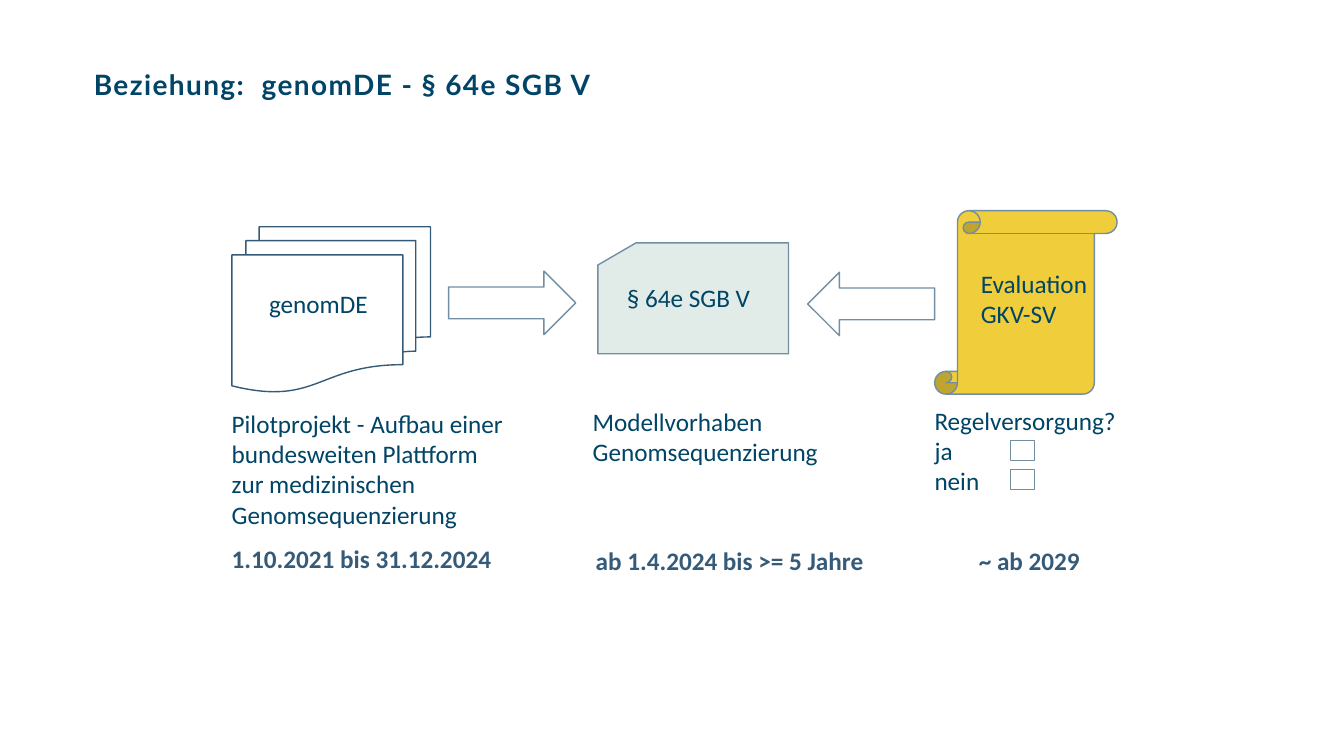
from dataclasses import dataclass
from typing import Optional

from pptx import Presentation
from pptx.dml.color import RGBColor
from pptx.enum.shapes import MSO_SHAPE
from pptx.enum.text import MSO_ANCHOR, PP_ALIGN
from pptx.util import Inches, Pt

NAVY, SLATE, OUTLINE = "004466", "355B79", "728EA3"
LABEL = {"name": "Calibri", "size": Pt(18), "bold": False}
DATE = {**LABEL, "bold": True}
HEADING = {"name": "Lato", "size": Pt(20), "bold": True}


@dataclass
class Figure:
    kind: MSO_SHAPE
    left: float
    top: float
    width: float
    height: float
    fill: Optional[str] = None
    line: str = OUTLINE
    rotation: float = 0


@dataclass
class Caption:
    lines: list[str]
    left: float
    top: float
    width: float
    height: float
    wrap: bool = False
    font: Optional[dict] = None
    color: str = NAVY


FIGURES = [
    Figure(MSO_SHAPE.FLOWCHART_CARD, 5.93, 2.41, 1.89, 1.1, "E1EBE7"),
    Figure(MSO_SHAPE.FLOWCHART_MULTIDOCUMENT, 2.3, 2.25, 1.97, 1.64, "FFFFFF", SLATE),
    Figure(MSO_SHAPE.RIGHT_ARROW, 4.45, 2.69, 1.26, 0.63),
    Figure(MSO_SHAPE.VERTICAL_SCROLL, 9.27, 2.09, 1.81, 1.82, "EFCD3B"),
    Figure(MSO_SHAPE.RIGHT_ARROW, 8.01, 2.7, 1.26, 0.63, rotation=180),
    Figure(MSO_SHAPE.RECTANGLE, 10.02, 4.37, 0.24, 0.2),
    Figure(MSO_SHAPE.RECTANGLE, 10.02, 4.66, 0.24, 0.2, "FFFFFF"),
]

CAPTIONS = [
    Caption(["§ 64e SGB V"], 6.12, 2.75, 1.44, 0.4),
    Caption(["Modellvorhaben", "Genomsequenzierung"], 5.78, 3.98, 2.46, 0.71),
    Caption(["genomDE"], 2.57, 2.81, 1.19, 0.4),
    Caption(["Pilotprojekt - Aufbau einer", "bundesweiten Plattform zur medizinischen",
             "Genomsequenzierung"], 2.2, 4, 2.92, 1.62, wrap=True),
    Caption(["Evaluation", "GKV-SV"], 9.63, 2.61, 1.27, 0.71),
    Caption(["Regelversorgung?", "ja", "nein"], 9.17, 3.97, 2.02, 1.31),
    Caption(["1.10.2021 bis 31.12.2024"], 2.2, 5.34, 2.92, 0.71, True, DATE, SLATE),
    Caption(["ab 1.4.2024 bis >= 5 Jahre"], 5.81, 5.36, 2.92, 0.71, True, DATE, SLATE),
    Caption(["~ ab 2029"], 9.61, 5.36, 1.29, 0.71, True, DATE, SLATE),
]


def rgb(color: str) -> RGBColor:
    return RGBColor.from_string(color)


def format_font(font, values: dict, color: str) -> None:
    for attribute, value in values.items():
        setattr(font, attribute, value)
    font.color.rgb = rgb(color)


def draw_figure(slide, figure: Figure) -> None:
    shape = slide.shapes.add_shape(
        figure.kind, Inches(figure.left), Inches(figure.top),
        Inches(figure.width), Inches(figure.height))
    shape.shadow.inherit = False
    shape.rotation = figure.rotation
    if figure.fill:
        shape.fill.solid()
        shape.fill.fore_color.rgb = rgb(figure.fill)
    else:
        shape.fill.background()
    shape.line.color.rgb = rgb(figure.line)
    shape.line.width = Pt(1)


def draw_caption(slide, caption: Caption) -> None:
    box = slide.shapes.add_textbox(
        Inches(caption.left), Inches(caption.top),
        Inches(caption.width), Inches(caption.height))
    frame = box.text_frame
    frame.word_wrap = caption.wrap
    frame.text = "\n".join(caption.lines)
    for paragraph in frame.paragraphs:
        for run in paragraph.runs:
            format_font(run.font, caption.font or LABEL, caption.color)


def write_title(slide, text: str) -> None:
    title = slide.shapes.title
    title.left, title.top = Inches(0.83), Inches(0.66)
    title.width, title.height = Inches(10.57), Inches(0.4)
    frame = title.text_frame
    frame.word_wrap = True
    frame.vertical_anchor = MSO_ANCHOR.MIDDLE
    frame.text = text
    paragraph = frame.paragraphs[0]
    paragraph.alignment = PP_ALIGN.LEFT
    paragraph.line_spacing = 0.9
    run = paragraph.runs[0]
    format_font(run.font, HEADING, "004467")
    run._r.get_or_add_rPr().set("spc", "100")


def main() -> None:
    presentation = Presentation()
    presentation.slide_width = Inches(13.33)
    presentation.slide_height = Inches(7.5)
    slide = presentation.slides.add_slide(presentation.slide_layouts[5])
    write_title(slide, "Beziehung:  genomDE - § 64e SGB V")
    for figure in FIGURES:
        draw_figure(slide, figure)
    for caption in CAPTIONS:
        draw_caption(slide, caption)
    presentation.save("out.pptx")


if __name__ == "__main__":
    main()
